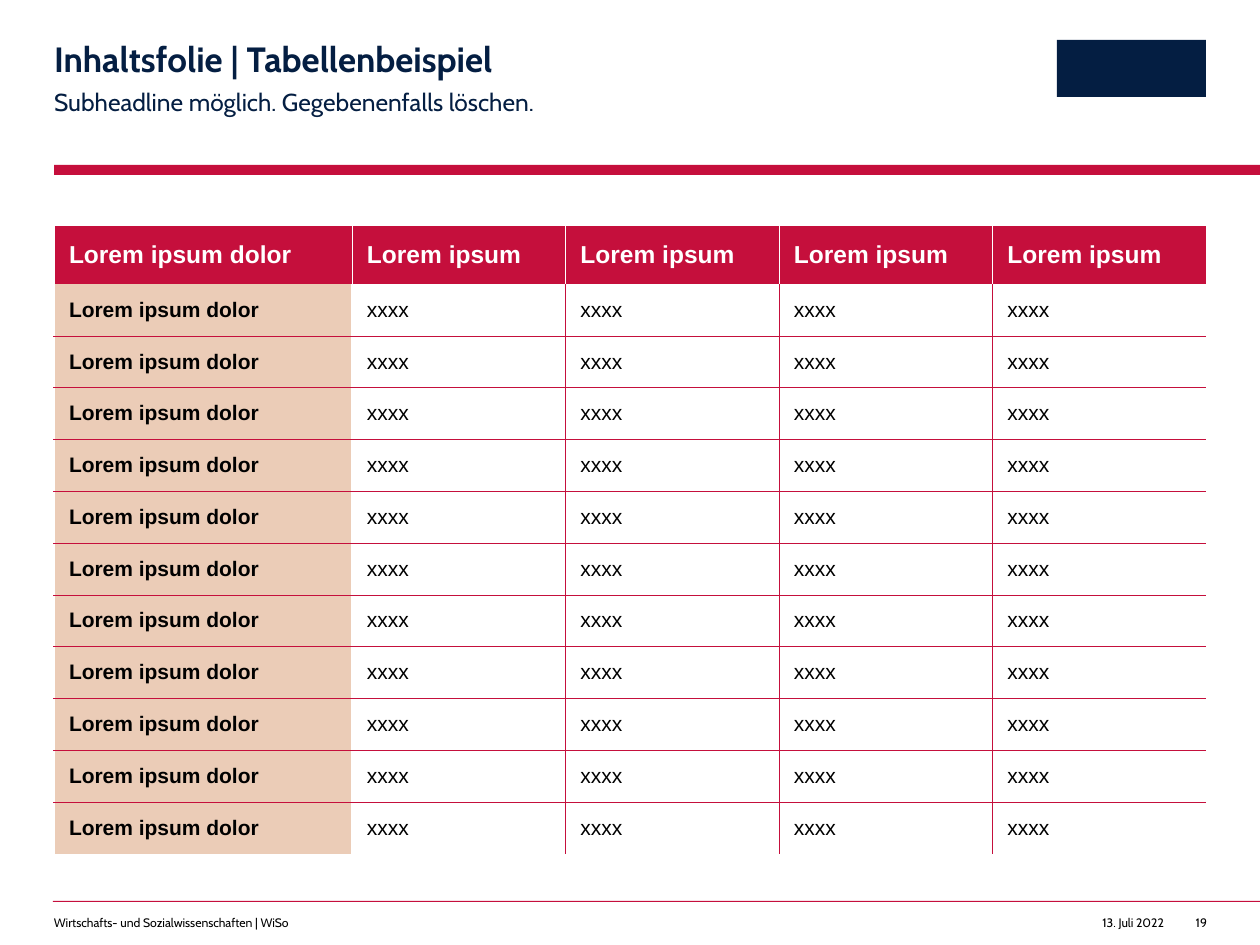
from lxml.etree import SubElement
from pptx import Presentation
from pptx.dml.color import RGBColor
from pptx.enum.shapes import MSO_SHAPE as Shape
from pptx.enum.text import MSO_ANCHOR as Anchor, MSO_AUTO_SIZE as AutoSize, PP_ALIGN as Align
from pptx.oxml.ns import qn
from pptx.util import Emu, Pt

COLORS = {"red": "C50F3C", "navy": "041E42", "sand": "EBCCB7", "white": "FFFFFF", "black": "000000"}
HEADING_FONT, TABLE_FONT = "Cabin", "Arial"

TITLE = "Inhaltsfolie | Tabellenbeispiel"
SUBTITLE = "Subheadline möglich. Gegebenenfalls löschen."
HEADER = ["Lorem ipsum dolor"] + ["Lorem ipsum"] * 4
ROWS = [HEADER] + [["Lorem ipsum dolor"] + ["xxxx"] * 4] * 11

# color, left, top, width, height in px
BLOCKS = [
    ("red", 54, 165, 1206, 10),
    ("red", 53, 901, 1207, 1),
    ("navy", 1057, 40, 149, 57),  # logo area
]
# text, left, width, alignment, wrap
FOOTERS = [
    ("13. Juli 2022", 1090, 74, Align.RIGHT, False),
    ("Wirtschafts- und Sozialwissenschaften | WiSo", 54, 566, Align.LEFT, True),
    ("19", 1182, 25, Align.RIGHT, False),
]
FOOTER_TOP, FOOTER_HEIGHT = 915, 15

TABLE_BOX = (54, 225, 1152, 629)
FIRST_COLUMN, HEADER_HEIGHT = 298, 59
CELL_MARGIN_X, CELL_MARGIN_Y = 15, 5


def px(value):
    return Emu(round(value * 914400 / 126))


def rgb(name):
    return RGBColor.from_string(COLORS[name])


def format_text(frame, font, size, color, bold=False, align=Align.LEFT):
    paragraph = frame.paragraphs[0]
    paragraph.alignment = align
    for run in paragraph.runs:
        run.font.name = font
        run.font.size = Pt(size)
        run.font.bold = bold
        run.font.color.rgb = rgb(color)
    return paragraph


def reset_frame(frame, wrap=True):
    """Remove insets and autofit, and start the text at the top."""
    frame.margin_left = frame.margin_right = frame.margin_top = frame.margin_bottom = 0
    frame.vertical_anchor = Anchor.TOP
    frame.auto_size = AutoSize.NONE
    frame.word_wrap = wrap


def fill_placeholder(shape, text, box, size, bold, spacing):
    shape.left, shape.top, shape.width, shape.height = map(px, box)
    frame = shape.text_frame
    frame.text = text
    reset_frame(frame)
    paragraph = format_text(frame, HEADING_FONT, size, "navy", bold)
    paragraph.line_spacing = spacing
    paragraph.space_before = Pt(0)
    return paragraph


def add_block(slide, color, *box):
    shape = slide.shapes.add_shape(Shape.RECTANGLE, *map(px, box))
    shape.shadow.inherit = False
    shape.fill.solid()
    shape.fill.fore_color.rgb = rgb(color)
    shape.line.fill.background()


def add_footer(slide, text, left, width, align, wrap):
    box = slide.shapes.add_textbox(px(left), px(FOOTER_TOP), px(width), px(FOOTER_HEIGHT))
    box.text_frame.text = text
    reset_frame(box.text_frame, wrap)
    format_text(box.text_frame, HEADING_FONT, 7, "black", align=align)


def cell_borders(row, column):
    """Return (color, points) or None for the left, right, top and bottom side."""
    last_row, last_column = len(ROWS) - 1, len(HEADER) - 1
    rule, edge, divider = ("red", 0.25), ("white", 1), ("white", 0.5)
    if row == 0:
        left = divider if column else edge
        return left, divider if column < last_column else None, edge, None
    left = rule if column > 1 else edge
    right = edge if column == 0 else rule if column < last_column else None
    return left, right, rule if row > 1 else None, rule if row < last_row else None


def set_borders(cell, borders):
    properties = cell._tc.get_or_add_tcPr()
    for index, (side, border) in enumerate(zip("LRTB", borders)):
        line = SubElement(properties, qn(f"a:ln{side}"))
        properties.insert(index, line)
        if border is None:
            SubElement(line, qn("a:noFill"))
            continue
        color, points = border
        line.set("w", str(Pt(points)))
        fill = SubElement(line, qn("a:solidFill"))
        SubElement(fill, qn("a:srgbClr"), val=COLORS[color])


def add_table(slide):
    width, height = TABLE_BOX[2:]
    shape = slide.shapes.add_table(len(ROWS), len(HEADER), *map(px, TABLE_BOX))
    table = shape.table
    table.horz_banding = False
    for index, column in enumerate(table.columns):
        column.width = px((width - FIRST_COLUMN) / (len(HEADER) - 1) if index else FIRST_COLUMN)
    for index, row in enumerate(table.rows):
        row.height = px((height - HEADER_HEIGHT) / (len(ROWS) - 1) if index else HEADER_HEIGHT)

    for row, texts in enumerate(ROWS):
        for column, text in enumerate(texts):
            cell = table.cell(row, column)
            cell.text = text
            cell.vertical_anchor = Anchor.MIDDLE
            cell.margin_left = cell.margin_right = px(CELL_MARGIN_X)
            cell.margin_top = cell.margin_bottom = px(CELL_MARGIN_Y)
            is_header, is_label = row == 0, column == 0
            size, color = (14, "white") if is_header else (12, "black")
            format_text(cell.text_frame, TABLE_FONT, size, color, is_header or is_label)
            if is_header or is_label:
                cell.fill.solid()
                cell.fill.fore_color.rgb = rgb("red" if is_header else "sand")
            else:
                cell.fill.background()
            set_borders(cell, cell_borders(row, column))


def main():
    presentation = Presentation()
    presentation.slide_width, presentation.slide_height = px(1260), px(945)
    slide = presentation.slides.add_slide(presentation.slide_layouts[1])

    for block in BLOCKS:
        add_block(slide, *block)
    for footer in FOOTERS:
        add_footer(slide, *footer)

    fill_placeholder(slide.shapes.title, TITLE, (54, 42, 707, 38), 20, True, 0.9)
    subtitle = fill_placeholder(slide.placeholders[1], SUBTITLE, (54, 84, 707, 30), 14, False, 1.1)
    subtitle.space_after = Pt(8)
    properties = subtitle._p.get_or_add_pPr()
    properties.set("marL", "0")
    properties.set("indent", "0")
    SubElement(properties, qn("a:buNone"))

    add_table(slide)
    presentation.save("out.pptx")


if __name__ == "__main__":
    main()
